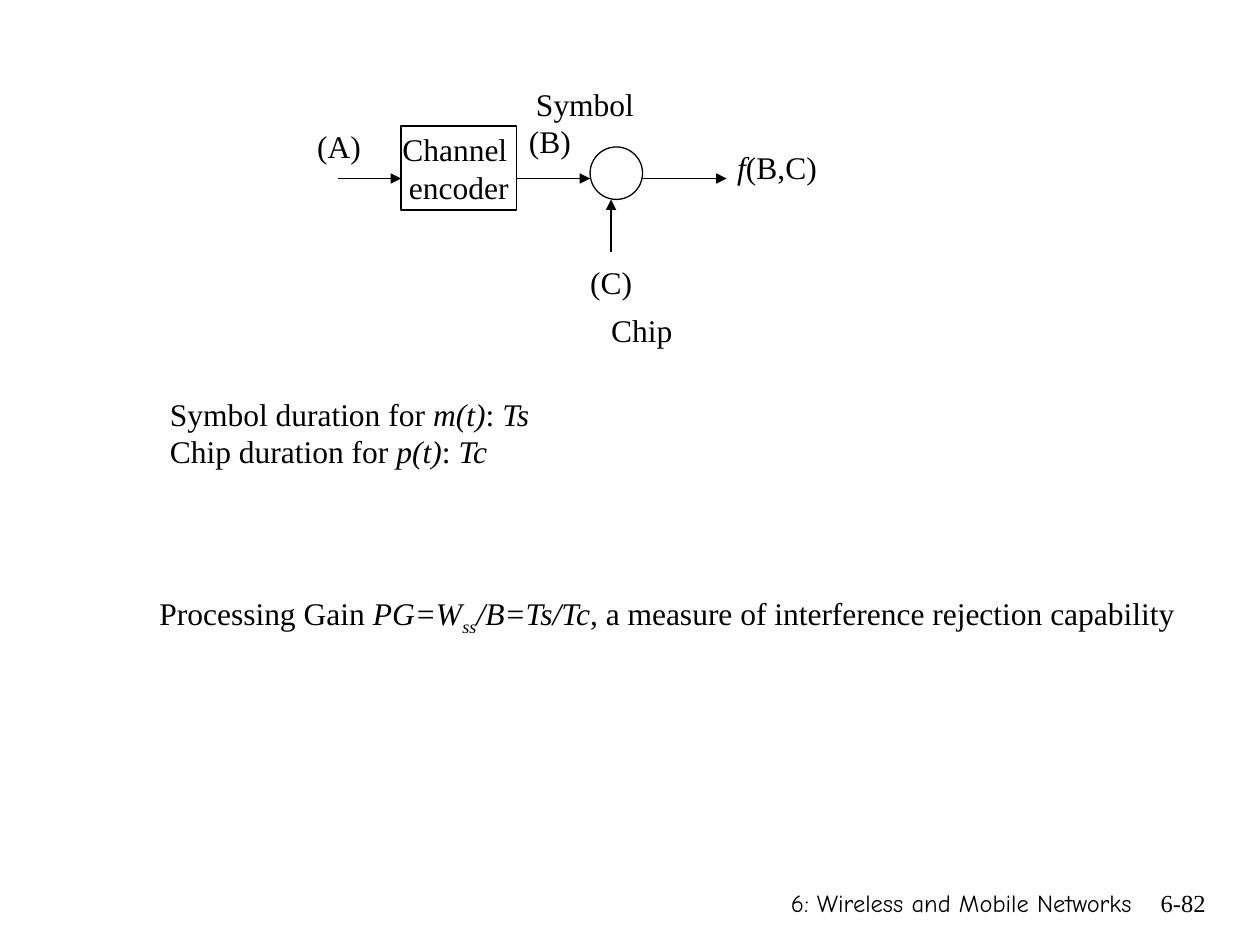
from lxml.etree import SubElement
from pptx import Presentation
from pptx.dml.color import RGBColor
from pptx.enum.shapes import MSO_CONNECTOR, MSO_SHAPE
from pptx.enum.text import MSO_ANCHOR, PP_ALIGN
from pptx.oxml.ns import qn
from pptx.util import Pt

BLACK, WHITE = "000000", "FFFFFF"
SERIF, HAND = "Times New Roman", "Comic Neue"
LABEL_HEIGHT = 29
PLAIN, ITALIC, SUBSCRIPT = "plain", "italic", "subscript"


def color(value):
    return RGBColor.from_string(value)


def write(frame, lines, size=18, font=SERIF, align=PP_ALIGN.LEFT, wrap=False,
          anchor=MSO_ANCHOR.TOP):
    """Fill a text frame; each line is a list of (text, style) runs."""
    frame.word_wrap = wrap
    frame.vertical_anchor = anchor
    for index, runs in enumerate(lines):
        paragraph = frame.paragraphs[0] if index == 0 else frame.add_paragraph()
        paragraph.alignment = align
        for text, style in runs:
            run = paragraph.add_run()
            run.text = text
            run.font.size = Pt(size)
            run.font.name = font
            run.font.color.rgb = color(BLACK)
            run.font.italic = style != PLAIN
            if style == SUBSCRIPT:
                run.font._element.set("baseline", "-25000")


def add_text(slide, box, lines, **text_format):
    textbox = slide.shapes.add_textbox(*map(Pt, box))
    write(textbox.text_frame, lines, **text_format)


def add_block(slide, kind, box):
    block = slide.shapes.add_shape(kind, *map(Pt, box))
    block.shadow.inherit = False
    block.fill.solid()
    block.fill.fore_color.rgb = color(WHITE)
    block.line.color.rgb = color(BLACK)
    block.line.width = Pt(0.75)
    return block


def add_arrow(slide, *ends):
    arrow = slide.shapes.add_connector(MSO_CONNECTOR.STRAIGHT, *map(Pt, ends))
    arrow.line.color.rgb = color(BLACK)
    arrow.line.width = Pt(0.75)
    SubElement(arrow.line._get_or_add_ln(), qn("a:tailEnd"), type="triangle")
    SubElement(arrow._element.spPr, qn("a:effectLst"))


def add_spreading_diagram(slide, left, top):
    """Channel encoder feeding a combiner, which also takes the chip signal."""
    encoder_x, encoder_width = left + 55, 66
    encoder_end = encoder_x + encoder_width
    combiner_x, combiner_y, diameter = left + 163, top + 39, 30
    combiner_end = combiner_x + diameter
    signal_y, chip_x = top + 57, left + 175

    add_block(slide, MSO_SHAPE.OVAL, (combiner_x, combiner_y, diameter, diameter))
    encoder = add_block(slide, MSO_SHAPE.RECTANGLE,
                        (encoder_x, top + 27, encoder_width, 48))
    write(encoder.text_frame, [[("Channel ", PLAIN)], [("encoder", PLAIN)]],
          align=PP_ALIGN.CENTER, anchor=MSO_ANCHOR.MIDDLE)

    for start, end in ((left + 19, encoder_x), (encoder_end, combiner_x),
                       (combiner_end, left + 241)):
        add_arrow(slide, start, signal_y, end, signal_y)
    add_arrow(slide, chip_x, top + 99, chip_x, combiner_y + diameter)

    labels = (
        (0, 24, 42, [("(A)", PLAIN)]),
        (121, 21, 42, [("(B)", PLAIN)]),
        (156, 102, 42, [("(C)", PLAIN)]),
        (240, 36, 62, [("f", ITALIC), ("(B,C)", PLAIN)]),
        (125, 0, 74, [("Symbol", PLAIN)]),
        (168, 129, 53, [("Chip", PLAIN)]),
    )
    for x, y, width, runs in labels:
        add_text(slide, (left + x, top + y, width, LABEL_HEIGHT), [runs],
                 wrap=True)


def add_durations(slide, left, top, width):
    names = (("Symbol", "m(t)", "Ts"), ("Chip", "p(t)", "Tc"))
    lines = [[(f"{unit} duration for ", PLAIN), (signal, ITALIC),
              (": ", PLAIN), (duration, ITALIC)]
             for unit, signal, duration in names]
    add_text(slide, (left, top, width, 50), lines, wrap=True)


def add_processing_gain(slide, left, top, width):
    add_text(slide, (left, top, width, LABEL_HEIGHT), [[
        ("Processing Gain ", PLAIN), ("PG=W", ITALIC), ("ss", SUBSCRIPT),
        ("/B=Ts/Tc", ITALIC),
        (", a measure of interference rejection capability", PLAIN)]])


def add_footer(slide, top, height):
    parts = ((350, 304, "6: Wireless and Mobile Networks", HAND),
             (643, 53, "6-82", SERIF))
    for left, width, text, font in parts:
        add_text(slide, (left, top, width, height), [[(text, PLAIN)]],
                 size=14, font=font, align=PP_ALIGN.RIGHT, wrap=True)


def main():
    presentation = Presentation()
    presentation.slide_width, presentation.slide_height = Pt(720), Pt(540)
    slide = presentation.slides.add_slide(presentation.slide_layouts[6])
    add_footer(slide, 504, 36)
    add_spreading_diagram(slide, 174.2, 45)
    add_durations(slide, 90, 222, 252)
    add_processing_gain(slide, 84, 336, 600)
    presentation.save("out.pptx")


if __name__ == "__main__":
    main()
